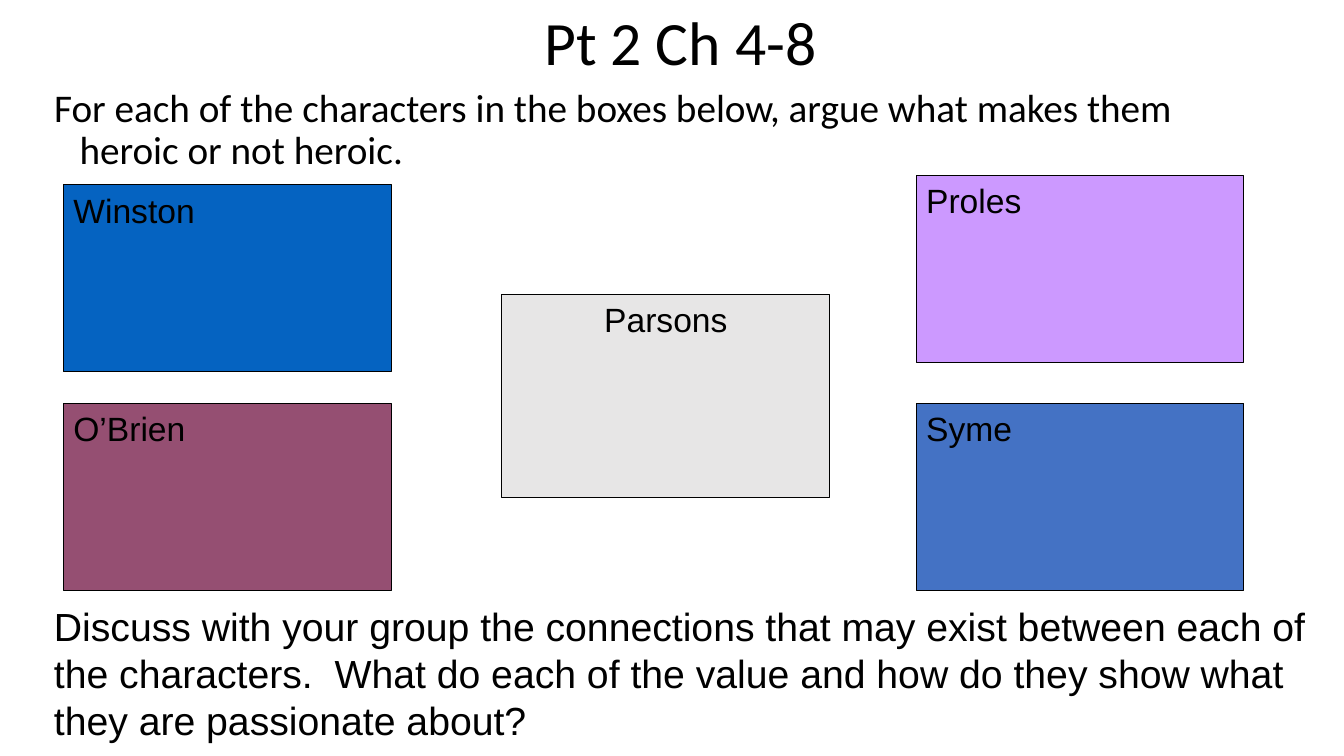
from lxml.etree import SubElement
from pptx import Presentation
from pptx.dml.color import RGBColor
from pptx.enum.shapes import MSO_SHAPE
from pptx.enum.text import MSO_ANCHOR as Anchor, MSO_AUTO_SIZE as AutoSize, PP_ALIGN as Align
from pptx.oxml.ns import qn
from pptx.util import Cm, Pt

COLORS = {
    "text": "000000",
    "Winston": "0563C1",
    "Proles": "CC99FF",
    "O’Brien": "954F72",
    "Parsons": "E7E6E6",
    "Syme": "4472C4",
}
BOX_WIDTH, BOX_HEIGHT = 8.26, 4.72
LEFT, CENTER, RIGHT = 1.6, 12.65, 23.09
LOWER_ROW = 10.16


def place(shape, box):
    """Move a shape to a box of left, top, width and height in centimetres."""
    shape.left, shape.top, shape.width, shape.height = (Cm(length) for length in box)


def write(shape, text, font_name, size, align=Align.LEFT, anchor=Anchor.TOP):
    """Fill a shape with one formatted paragraph and return the paragraph."""
    frame = shape.text_frame
    frame.text = text
    frame.word_wrap = True
    frame.auto_size = AutoSize.NONE
    frame.vertical_anchor = anchor
    paragraph = frame.paragraphs[0]
    paragraph.alignment = align
    font = paragraph.runs[0].font
    font.name, font.size = font_name, Pt(size)
    font.color.rgb = RGBColor.from_string(COLORS["text"])
    return paragraph


def add_title(slide, box):
    """Write the chapter heading in the title placeholder."""
    title = slide.shapes.title
    place(title, box)
    paragraph = write(title, "Pt 2 Ch 4-8", "Calibri", 44, Align.CENTER, Anchor.MIDDLE)
    paragraph.line_spacing = 0.9


def add_task(slide, box):
    """Write the task with a hanging indent in the body placeholder."""
    body = slide.placeholders[1]
    place(body, box)
    paragraph = write(
        body,
        "For each of the characters in the boxes below, argue what makes them heroic or not heroic.",
        "Calibri", 28)
    paragraph.line_spacing = 0.9
    paragraph.space_before = Pt(10)
    properties = paragraph._p.get_or_add_pPr()
    properties.set("marL", str(Cm(0.64)))
    properties.set("indent", str(Cm(-0.64)))
    SubElement(properties, qn("a:buNone"))


def add_character(slide, name, box, align=Align.LEFT):
    """Draw a coloured box headed with a character's name."""
    rectangle = slide.shapes.add_shape(MSO_SHAPE.RECTANGLE, *(Cm(length) for length in box))
    rectangle.shadow.inherit = False
    rectangle.fill.solid()
    rectangle.fill.fore_color.rgb = RGBColor.from_string(COLORS[name])
    rectangle.line.color.rgb = RGBColor.from_string(COLORS["text"])
    rectangle.line.width = Pt(0.75)
    write(rectangle, name, "Arial", 24, align)


def add_discussion(slide, box):
    """Write the group discussion question below the boxes."""
    text_box = slide.shapes.add_textbox(*(Cm(length) for length in box))
    write(
        text_box,
        "Discuss with your group the connections that may exist between each of the characters.  "
        "What do each of the value and how do they show what they are passionate about?",
        "Arial", 28)


def main():
    """Build the slide and save it."""
    presentation = Presentation()
    presentation.slide_width, presentation.slide_height = Cm(33.87), Cm(19.05)
    slide = presentation.slides.add_slide(presentation.slide_layouts[1])
    add_title(slide, (5.72, -0.43, 22.86, 3.18))
    add_task(slide, (1.11, 2.1, 31.33, 14.9))
    for name, left, top in (
        ("Winston", LEFT, 4.65),
        ("Proles", RIGHT, 4.42),
        ("O’Brien", LEFT, LOWER_ROW),
        ("Syme", RIGHT, LOWER_ROW),
    ):
        add_character(slide, name, (left, top, BOX_WIDTH, BOX_HEIGHT))
    add_character(slide, "Parsons", (CENTER, 7.42, BOX_WIDTH, 5.11), Align.CENTER)
    add_discussion(slide, (1.11, 15.06, 32.08, 3.84))
    presentation.save("out.pptx")


if __name__ == "__main__":
    main()
